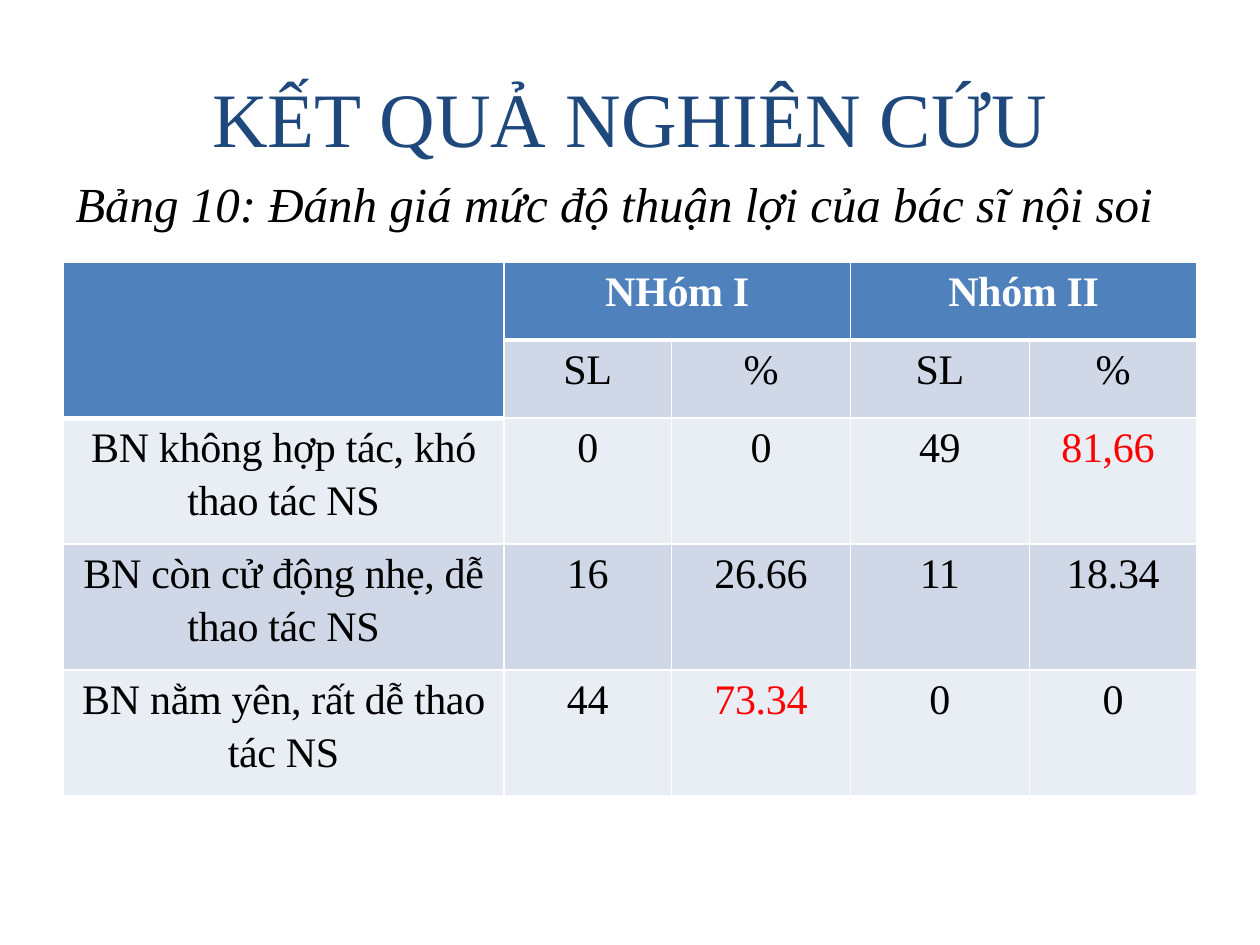
"""Build a slide with a table comparing endoscopy convenience in two groups."""
from dataclasses import dataclass

from lxml import etree
from pptx import Presentation
from pptx.dml.color import RGBColor
from pptx.enum import text
from pptx.oxml import ns
from pptx.util import Inches, Pt

TITLE = "KẾT QUẢ NGHIÊN CỨU"
CAPTION = "Bảng 10: Đánh giá mức độ thuận lợi của bác sĩ nội soi"
ROWS = [
    ["", "NHóm I", "", "Nhóm II", ""],
    ["", "SL", "%", "SL", "%"],
    ["BN không hợp tác, khó thao tác NS", "0", "0", "49", "81,66 "],
    ["BN còn cử động nhẹ, dễ thao tác NS", "16", "26.66", "11", "18.34"],
    ["BN nằm yên, rất dễ thao tác NS", "44", "73.34", "0", "0"],
]
MERGES = [((0, 0), (1, 0)), ((0, 1), (0, 2)), ((0, 3), (0, 4))]
HIGHLIGHTS = {(2, 4), (4, 2)}
COLUMN_WIDTHS = [3.5, 1.33, 1.42, 1.42, 1.33]
ROW_HEIGHTS = [0.62, 0.62, 1, 1, 1]
LEFT, WIDTH = 0.5, 9


@dataclass(frozen=True)
class Theme:
    """Colours, font and type sizes of the slide."""
    font: str = "Times New Roman"
    title: str = "1F497D"
    ink: str = "000000"
    white: str = "FFFFFF"
    accent: str = "FF0000"
    header: str = "4F81BD"
    bands: tuple = ("E9EDF4", "D0D8E8")
    title_size: int = 44
    caption_size: int = 28
    cell_size: int = 24


THEME = Theme()


def write(frame, words, size, color, bold=False, italic=False, align=None):
    """Put one styled paragraph in a text frame and return it."""
    frame.text = words
    frame.word_wrap = True
    para = frame.paragraphs[0]
    para.alignment = align
    for span in para.runs:
        font = span.font
        font.name, font.size = THEME.font, Pt(size)
        font.bold, font.italic = bold, italic
        font.color.rgb = RGBColor.from_string(color)
    return para


def add_text(page, top, height, words, size, color, **style):
    """Add a full-width text box and return its frame."""
    box = page.shapes.add_textbox(Inches(LEFT), Inches(top), Inches(WIDTH), Inches(height))
    write(box.text_frame, words, size, color, **style)
    return box.text_frame


def set_borders(cell, top, bottom):
    """Give a cell white borders with the given top and bottom widths."""
    properties = cell._tc.get_or_add_tcPr()
    sides = {"lnL": 1, "lnR": 1, "lnT": top, "lnB": bottom}
    for position, (side, width) in enumerate(sides.items()):
        line = etree.Element(ns.qn(f"a:{side}"), w=str(Pt(width)))
        fill = etree.SubElement(line, ns.qn("a:solidFill"))
        etree.SubElement(fill, ns.qn("a:srgbClr"), val=THEME.white)
        properties.insert(position, line)


def style_cell(cell, row, column):
    """Fill, border and write one table cell."""
    in_corner = column == 0 and row < 2
    is_header = row == 0 or in_corner
    cell.fill.solid()
    fill = THEME.header if is_header else THEME.bands[row % 2]
    cell.fill.fore_color.rgb = RGBColor.from_string(fill)
    under_header = row == 1 or (row == 2 and column == 0)
    set_borders(cell, 3 if under_header and not in_corner else 1, 3 if is_header else 1)
    cell.margin_left = cell.margin_right = Inches(0.07)
    cell.margin_top = cell.margin_bottom = 0
    color = THEME.white if is_header else THEME.ink
    if (row, column) in HIGHLIGHTS:
        color = THEME.accent
    para = write(cell.text_frame, ROWS[row][column], THEME.cell_size, color,
                 bold=is_header, align=text.PP_ALIGN.CENTER)
    para.line_spacing = 1.15
    for span in para.runs:
        span.font._element.set("spc", "-20")


def add_results(page):
    """Add the results table."""
    table = page.shapes.add_table(
        len(ROWS), len(COLUMN_WIDTHS), Inches(LEFT), Inches(2.08),
        Inches(WIDTH), Inches(sum(ROW_HEIGHTS))).table
    for column, width in zip(table.columns, COLUMN_WIDTHS):
        column.width = Inches(width)
    for row, height in zip(table.rows, ROW_HEIGHTS):
        row.height = Inches(height)
    for row, values in enumerate(ROWS):
        for column in range(len(values)):
            style_cell(table.cell(row, column), row, column)
    for first, last in MERGES:
        table.cell(*first).merge(table.cell(*last))


def main():
    """Build and save the deck."""
    deck = Presentation()
    deck.slide_width, deck.slide_height = Inches(10), Inches(7.5)
    page = deck.slides.add_slide(deck.slide_layouts[6])
    title = add_text(page, 0.3, 1.25, TITLE, THEME.title_size, THEME.title,
                     align=text.PP_ALIGN.CENTER)
    title.vertical_anchor = text.MSO_ANCHOR.MIDDLE
    add_results(page)
    caption = add_text(page, 1.33, 0.57, CAPTION, THEME.caption_size, THEME.ink, italic=True)
    caption.auto_size = text.MSO_AUTO_SIZE.SHAPE_TO_FIT_TEXT
    deck.save("out.pptx")


if __name__ == "__main__":
    main()
